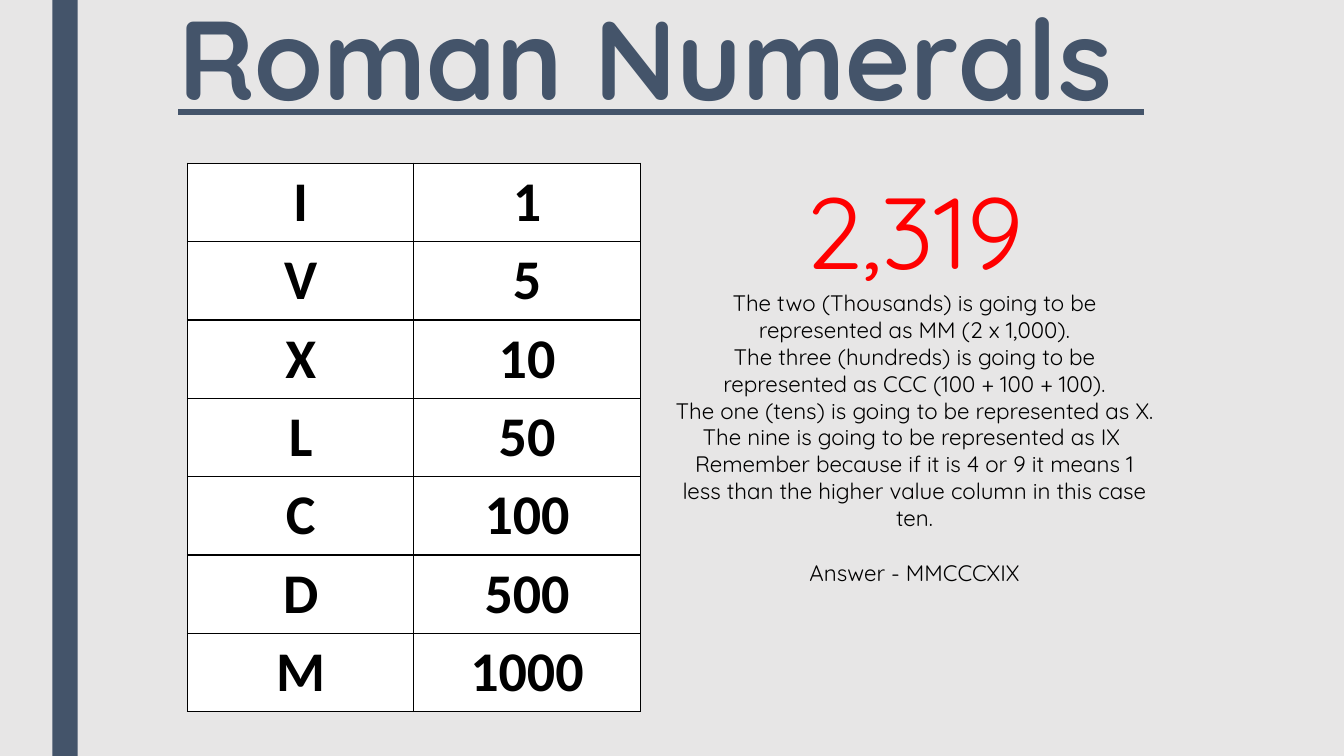
from pptx import Presentation, util as u
from pptx.dml.color import RGBColor
from pptx.enum import shapes, text
from pptx.oxml import parse_xml
from pptx.oxml.ns import nsdecls

WIDE, HIGH = 13.33, 7.5
SLATE, BLACK, RED, WHITE, GREY = "44546A", "000000", "FF0000", "FFFFFF", "E7E6E6"
FONT = "Quicksand"
TOP = 1.62  # shared top edge of table and notes

VALUES = [("I", 1), ("V", 5), ("X", 10), ("L", 50),
          ("C", 100), ("D", 500), ("M", 1000)]
STEPS = [
    "The two (Thousands) is going to be represented as MM (2 x 1,000).",
    "The three (hundreds) is going to be represented as CCC (100 + 100 + 100).",
    "The one (tens) is going to be represented as X.",
    "The nine is going to be represented as IX ",
    "Remember because if it is 4 or 9 it means 1 less than the higher value "
    "column in this case ten.",
]


def paint(fill, shade):
    fill.solid()
    fill.fore_color.rgb = RGBColor.from_string(shade)


def place(*lengths):
    return [u.Inches(n) for n in lengths]


def add_run(para, words, size, shade=BLACK, face=FONT, bold=False):
    run = para.add_run()
    run.text = words
    font = run.font
    font.name, font.size, font.bold = face, u.Pt(size), bold
    font.color.rgb = RGBColor.from_string(shade)
    return run


def add_bar(slide):
    bar = slide.shapes.add_shape(shapes.MSO_SHAPE.RECTANGLE,
                                 *place(0.52, 0, 0.25, HIGH))
    bar.shadow.inherit = False
    paint(bar.fill, SLATE)
    bar.line.fill.background()


def set_title(slide, words):
    title = slide.shapes.title
    title.left, title.top, title.width, title.height = place(
        WIDE / 8, 0, WIDE * 3 / 4, 1.54)
    frame = title.text_frame
    frame.word_wrap = True
    frame.auto_size = text.MSO_AUTO_SIZE.NONE
    frame.vertical_anchor = text.MSO_ANCHOR.TOP
    para = frame.paragraphs[0]
    para.alignment = text.PP_ALIGN.LEFT
    para.line_spacing = 0.89
    add_run(para, words, 80, SLATE, bold=True).font.underline = True


def add_edges(cell):
    props = cell._tc.get_or_add_tcPr()
    for spot, side in enumerate("LRTB"):
        props.insert(spot, parse_xml(
            f'<a:ln{side} {nsdecls("a")} w="12700"><a:solidFill>'
            f'<a:srgbClr val="{BLACK}"/></a:solidFill></a:ln{side}>'))


def add_grid(slide, rows):
    grid = slide.shapes.add_table(len(rows), 2,
                                  *place(1.86, TOP, 4.49, 5.43)).table
    for line, row in zip(grid.rows, rows):
        for cell, item in zip(line.cells, row):
            paint(cell.fill, WHITE)
            add_edges(cell)
            cell.vertical_anchor = text.MSO_ANCHOR.MIDDLE
            para = cell.text_frame.paragraphs[0]
            para.alignment = text.PP_ALIGN.CENTER
            add_run(para, str(item), 40, face="Calibri", bold=True)


def add_notes(slide, number, steps, answer):
    frame = slide.shapes.add_textbox(*place(6.59, TOP, 4.96, 6.02)).text_frame
    frame.word_wrap = True
    frame.auto_size = text.MSO_AUTO_SIZE.SHAPE_TO_FIT_TEXT
    para = frame.paragraphs[0]
    add_run(para, number, 72, RED)
    for step in [*steps, answer]:
        para = frame.add_paragraph()
        add_run(para, step, 16)
    para.space_before = u.Pt(20)  # one line of air above the answer
    for para in frame.paragraphs:
        para.alignment = text.PP_ALIGN.CENTER


def main():
    deck = Presentation()
    deck.slide_width, deck.slide_height = place(WIDE, HIGH)
    slide = deck.slides.add_slide(deck.slide_layouts[5])
    paint(slide.background.fill, GREY)

    # Side bar and heading
    add_bar(slide)
    set_title(slide, "Roman Numerals ")

    # Numeral values and worked example
    add_grid(slide, VALUES)
    add_notes(slide, "2,319", STEPS, "Answer - MMCCCXIX")

    deck.save("out.pptx")


if __name__ == "__main__":
    main()
